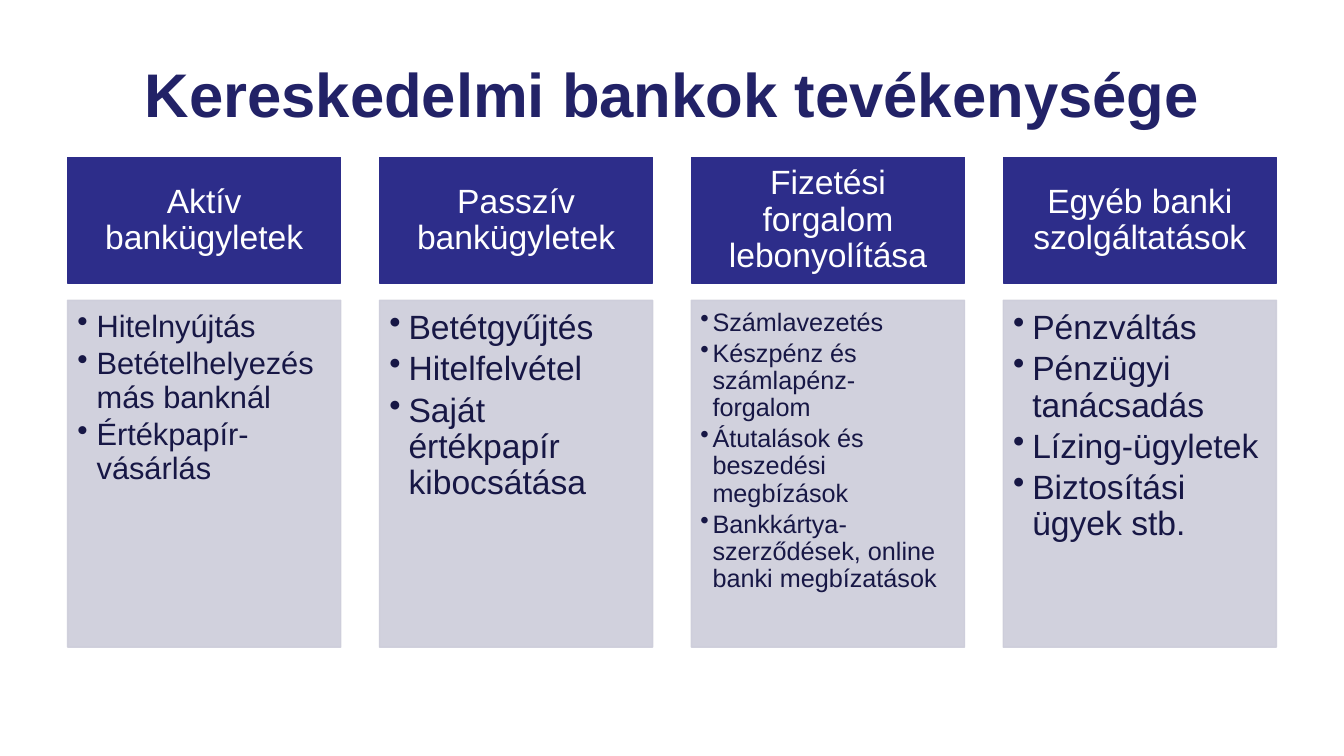
from lxml.etree import SubElement
from pptx import Presentation
from pptx.dml.color import RGBColor as Rgb
from pptx.enum.shapes import MSO_SHAPE as Shape
from pptx.enum.text import MSO_ANCHOR as Anchor, PP_ALIGN as Align
from pptx.oxml.ns import qn
from pptx.util import Inches, Pt

COLORS = {"title": "222267", "head": "2D2D8A", "panel": "CDCDDA",
          "light": "FFFFFF", "dark": "171745"}
WIDE = (0.1, 0.1, 0.14, 0.16)
TIGHT = (0.09, 0.09, 0.12, 0.13)
COLUMNS = [
    ("Aktív bankügyletek", 22, 0.19, WIDE,
     ["Hitelnyújtás", "Betételhelyezés más banknál", "Értékpapír-vásárlás"]),
    ("Passzív bankügyletek", 24, 0.19, WIDE,
     ["Betétgyűjtés", "Hitelfelvétel", "Saját értékpapír kibocsátása"]),
    ("Fizetési forgalom lebonyolítása", 18, 0.12, TIGHT,
     ["Számlavezetés", "Készpénz és számlapénz-forgalom",
      "Átutalások és beszedési megbízások",
      "Bankkártya-szerződések, online banki megbízatások"]),
    ("Egyéb banki szolgáltatások", 24, 0.19, WIDE,
     ["Pénzváltás", "Pénzügyi tanácsadás", "Lízing-ügyletek",
      "Biztosítási ügyek stb."]),
]


def style(para, size, color, align, bold=False):
    """Align a paragraph and format its runs."""
    para.alignment = align
    for run in para.runs:
        font = run.font
        font.name, font.size, font.bold = "Arial", Pt(size), bold
        font.color.rgb = Rgb.from_string(COLORS[color])


def space(para, size, share):
    """Set tight lines and a gap after in proportion to the text size."""
    para.line_spacing = 0.9
    para.space_after = Pt(round(size * share, 2))


def add_title(slide, text):
    """Place and format the title."""
    title = slide.shapes.title
    title.left, title.top = Inches(0.67), Inches(0.3)
    title.width, title.height = Inches(12), Inches(1.25)
    frame = title.text_frame
    frame.text = text
    frame.vertical_anchor = Anchor.MIDDLE
    style(frame.paragraphs[0], 44, "title", Align.CENTER, True)


def add_box(slide, left, top, height, color, insets, anchor):
    """Draw a filled box and return it."""
    box = slide.shapes.add_shape(Shape.RECTANGLE, Inches(left), Inches(top),
                                 Inches(2.71), Inches(height))
    box.shadow.inherit = False
    box.fill.solid()
    box.line.fill.solid()
    box.line.width = Pt(1)
    for tone in (box.fill.fore_color, box.line.color):
        tone.rgb = Rgb.from_string(COLORS[color])
    frame = box.text_frame
    frame.word_wrap = True
    frame.vertical_anchor = anchor
    (frame.margin_left, frame.margin_top, frame.margin_right,
     frame.margin_bottom) = map(Inches, insets)
    return box


def add_head(slide, left, text):
    """Add a column heading."""
    box = add_box(slide, left, 1.56, 1.25, "head",
                  (0.19, 0.11, 0.19, 0.11), Anchor.MIDDLE)
    box.text_frame.text = text
    para = box.text_frame.paragraphs[0]
    space(para, 24, 0.35)
    style(para, 24, "light", Align.CENTER)


def add_list(slide, left, size, indent, insets, items):
    """Add a translucent panel with a bulleted list."""
    box = add_box(slide, left, 2.98, 3.44, "panel", insets, Anchor.TOP)
    for tone in box._element.spPr.iter(qn("a:srgbClr")):
        SubElement(tone, qn("a:alpha"), val="90000")
    frame = box.text_frame
    frame.text = "\n".join(items)
    for para in frame.paragraphs:
        para.level = 1
        space(para, size, 0.15)
        props = para._p.get_or_add_pPr()
        props.set("marL", str(Inches(indent)))
        props.set("indent", str(-Inches(indent)))
        SubElement(props, qn("a:buChar"), char="•")
        style(para, size, "dark", Align.LEFT)


def main():
    """Build and save the slide."""
    deck = Presentation()
    deck.slide_width, deck.slide_height = Inches(13.33), Inches(7.5)
    slide = deck.slides.add_slide(deck.slide_layouts[5])
    add_title(slide, "Kereskedelmi bankok tevékenysége")
    for i, (head, size, indent, insets, items) in enumerate(COLUMNS):
        left = 0.67 + i * 9.28 / 3
        add_head(slide, left, head)
        add_list(slide, left, size, indent, insets, items)
    deck.save("out.pptx")


if __name__ == "__main__":
    main()
